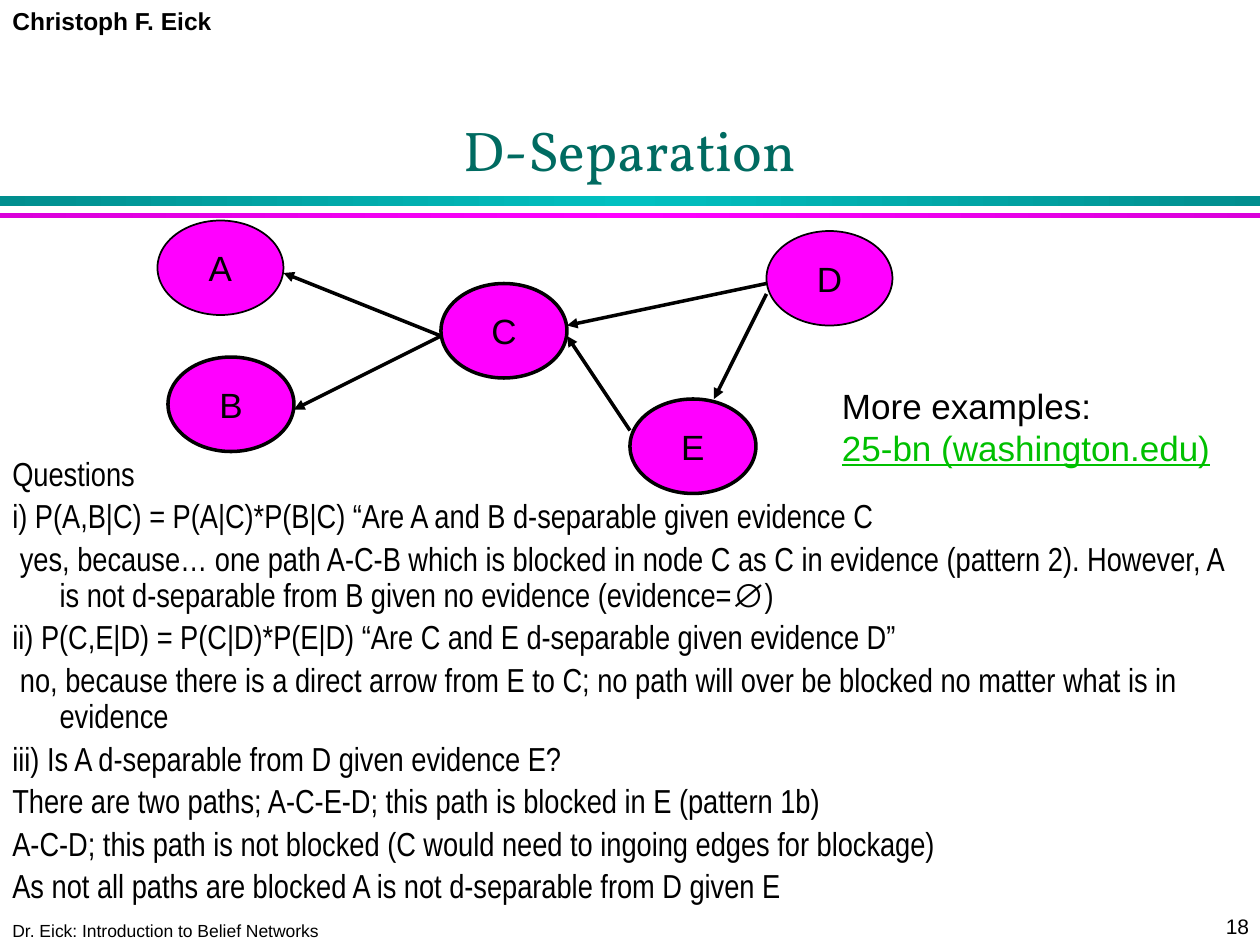
from copy import deepcopy
from dataclasses import dataclass

from lxml import etree
from pptx import Presentation
from pptx import util as u
from pptx.dml.color import RGBColor
from pptx.enum import shapes, text
from pptx.oxml import ns

Pt = u.Pt


@dataclass(frozen=True)
class Theme:
    """Colours, fonts and type sizes of the slide."""
    ink: str = "000000"
    title: str = "006B61"
    link: str = "00C000"
    node: str = "FF00FF"
    teal: tuple = ("008E8E", "00C0C0", "008E8E")
    magenta: tuple = ("DA00DA", "FF00FF", "DA00DA")
    sans: str = "Arial"
    narrow: str = "Arial Narrow"
    serif: str = "Vollkorn"
    title_size: float = 32
    label_size: float = 20
    body_size: float = 19
    header_size: float = 14
    number_size: float = 12
    footer_size: float = 10


THEME = Theme()
HANG = 27
ANSWER_SHIFT = 4.3
NODE_SIZE = (72, 54)
NODES = {"A": (0, 0, 1), "B": (6, 78, 2), "C": (162, 36, 2),
         "D": (348, 6, 1), "E": (270, 102, 2)}
EDGES = [("C", (0, 30), "A", (72, 30)), ("C", (0, 30), "B", (72, 30)),
         ("D", (0, 30), "C", (72, 24)), ("D", (0, 36), "E", (48, 0)),
         ("E", (0, 18), "C", (72, 30))]
QUESTIONS = [
    ("Questions", False),
    ("i) P(A,B|C) = P(A|C)*P(B|C) “Are A and B d-separable given evidence C", False),
    ("yes, because… one path A-C-B which is blocked in node C as C in evidence "
     "(pattern 2). However, A is not d-separable from B given no evidence "
     "(evidence=∅)", True),
    ("ii) P(C,E|D) = P(C|D)*P(E|D) “Are C and E d-separable given evidence D”", False),
    ("no, because there is a direct arrow from E to C; no path will over be "
     "blocked no matter what is in evidence", True),
    ("iii) Is A d-separable from D given evidence E?", False),
    ("There are two paths; A-C-E-D; this path is blocked in E (pattern 1b)", False),
    ("A-C-D; this path is not blocked (C would need to ingoing edges for blockage)", False),
    ("As not all paths are blocked A is not d-separable from D given E", False),
]


def style(paragraph, size, face=THEME.sans, color=THEME.ink, bold=False, underline=False):
    """Format every run of a paragraph."""
    for run in paragraph.runs:
        run.font.size = Pt(size)
        run.font.name = face
        run.font.color.rgb = RGBColor.from_string(color)
        run.font.bold = bold
        run.font.underline = underline


def add_text(slide, box, words, size, wrap=True, **look):
    """Add a text box with uniform type and return its frame."""
    frame = slide.shapes.add_textbox(*map(Pt, box)).text_frame
    frame.word_wrap = wrap
    frame.text = words
    for paragraph in frame.paragraphs:
        style(paragraph, size, **look)
    return frame


def add_bar(slide, box, colors):
    """Add a band with a horizontal gradient."""
    bar = slide.shapes.add_shape(shapes.MSO_SHAPE.RECTANGLE, *map(Pt, box))
    bar.shadow.inherit = False
    bar.line.fill.background()
    bar.fill.gradient()
    bar.fill.gradient_angle = 0
    stops = bar.element.spPr.find(".//" + ns.qn("a:gsLst"))
    stops.insert(1, deepcopy(stops[0]))
    for index, (stop, color) in enumerate(zip(bar.fill.gradient_stops, colors)):
        stop.position = index / 2
        stop.color.rgb = RGBColor.from_string(color)


def add_heading(slide, box):
    """Place the title above its two rules."""
    left, top, width, height = box
    frame = add_text(slide, (left + 54, top, width - 108, 60), "D-Separation",
                     THEME.title_size, face=THEME.serif, color=THEME.title)
    frame.vertical_anchor = text.MSO_ANCHOR.BOTTOM
    frame.paragraphs[0].alignment = text.PP_ALIGN.CENTER
    add_bar(slide, (left, top + height - 12.5, width, 5.8), THEME.teal)
    add_bar(slide, (left, top + height - 3, width, 3), THEME.magenta)


def add_node(slide, box, name, weight):
    """Add one labelled node of the network."""
    node = slide.shapes.add_shape(shapes.MSO_SHAPE.OVAL, *map(Pt, box))
    node.shadow.inherit = False
    node.fill.solid()
    node.fill.fore_color.rgb = RGBColor.from_string(THEME.node)
    node.line.color.rgb = RGBColor.from_string(THEME.ink)
    node.line.width = Pt(weight)
    frame = node.text_frame
    frame.word_wrap = False
    frame.vertical_anchor = text.MSO_ANCHOR.MIDDLE
    frame.text = name
    frame.paragraphs[0].alignment = text.PP_ALIGN.CENTER
    style(frame.paragraphs[0], THEME.label_size)


def add_arrow(slide, start, end):
    """Add an arrow between two points."""
    arrow = slide.shapes.add_connector(shapes.MSO_CONNECTOR.STRAIGHT,
                                       *map(Pt, (*start, *end)))
    arrow.line.color.rgb = RGBColor.from_string(THEME.ink)
    arrow.line.width = Pt(2)
    etree.SubElement(arrow.line._get_or_add_ln(), ns.qn("a:tailEnd"), type="triangle")
    etree.SubElement(arrow.element.spPr, ns.qn("a:effectLst"))


def add_network(slide, box):
    """Draw the belief network from its nodes and edges."""
    left, top = box[:2]
    for name, (x, y, weight) in NODES.items():
        add_node(slide, (left + x, top + y, *NODE_SIZE), name, weight)

    def anchor(name, offset):
        """Locate a point on a node."""
        return left + NODES[name][0] + offset[0], top + NODES[name][1] + offset[1]

    for source, exit_point, target, entry_point in EDGES:
        add_arrow(slide, anchor(source, exit_point), anchor(target, entry_point))


def add_questions(slide, box):
    """Set the questions and answers with hanging indents."""
    frame = add_text(slide, box, "\n".join(words for words, _ in QUESTIONS),
                     THEME.body_size, face=THEME.narrow)
    for index, (paragraph, (_, is_answer)) in enumerate(zip(frame.paragraphs, QUESTIONS)):
        first_indent = -HANG + (ANSWER_SHIFT if is_answer else 0)
        properties = paragraph._p.get_or_add_pPr()
        properties.set("marL", str(Pt(HANG)))
        properties.set("indent", str(Pt(first_indent)))
        paragraph.line_spacing = 0.9
        if index:
            paragraph.space_before = Pt(3.8)


def add_examples(slide, box):
    """Place the pointer to more examples."""
    frame = add_text(slide, box, "More examples:\n25-bn (washington.edu)",
                     THEME.label_size, wrap=False)
    style(frame.paragraphs[1], THEME.label_size, color=THEME.link, underline=True)


def add_margins(slide, box):
    """Place author, course and slide number at the slide edges."""
    left, top, width, height = box
    add_text(slide, (left, top, 129, 24), "Christoph F. Eick",
             THEME.header_size, wrap=False, bold=True)
    add_text(slide, (left, top + height - 18, 242, 19.4),
             "Dr. Eick: Introduction to Belief Networks", THEME.footer_size)
    add_text(slide, (left + width - 26.6, top + height - 21.6, 28.8, 21.6), "18",
             THEME.number_size, wrap=False)


def main():
    """Build and save the slide."""
    deck = Presentation()
    deck.slide_width, deck.slide_height = Pt(720), Pt(540)
    slide = deck.slides.add_slide(deck.slide_layouts[6])
    add_margins(slide, (0, 0, 720, 540))
    add_heading(slide, (0, 48, 720, 76.7))
    add_questions(slide, (0, 258, 720, 216))
    add_network(slide, (90, 126, 420, 156))
    add_examples(slide, (474, 216, 226.8, 55.4))
    deck.save("out.pptx")


if __name__ == "__main__":
    main()
